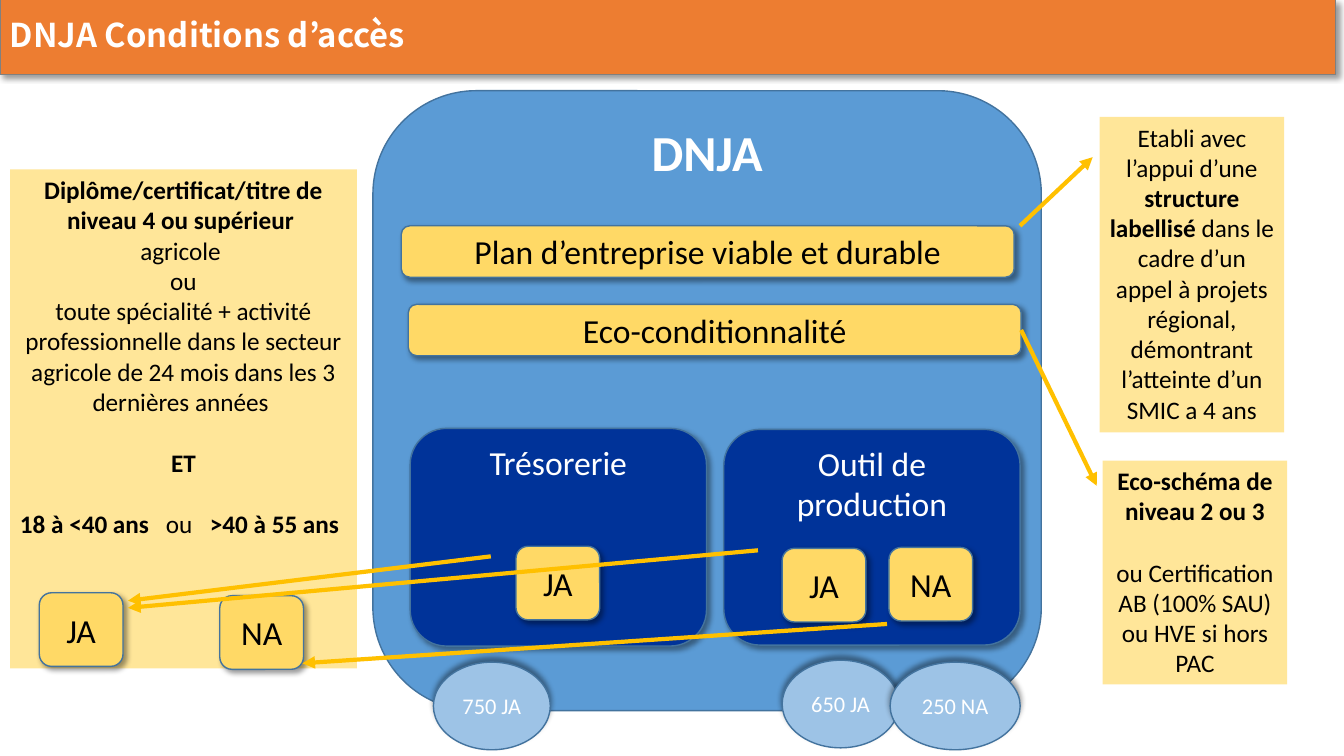
import pptx
import pptx.util
import pptx.dml.color
import pptx.enum.shapes
import pptx.enum.text
import pptx.oxml
import pptx.oxml.ns

Pt = pptx.util.Pt
RGB = pptx.dml.color.RGBColor
KIND = pptx.enum.shapes.MSO_SHAPE
ALIGN = pptx.enum.text.PP_ALIGN
ANCHOR = pptx.enum.text.MSO_ANCHOR
NS = pptx.oxml.ns.nsdecls("a")

ORANGE = RGB(0xED, 0x7D, 0x31)
GREY = RGB(0x80, 0x80, 0x80)
BLUE = RGB(0x5B, 0x9B, 0xD5)
EDGE = RGB(0x43, 0x73, 0x9E)
NAVY = RGB(0x00, 0x33, 0x99)
GOLD = RGB(0xFF, 0xD9, 0x66)
CREAM = RGB(0xFF, 0xE6, 0x99)
SKY = RGB(0x9D, 0xC3, 0xE6)
AMBER = RGB(0xFF, 0xC0, 0x00)
WHITE = RGB(0xFF, 0xFF, 0xFF)
BLACK = RGB(0x00, 0x00, 0x00)

deck = pptx.Presentation()
deck.slide_width, deck.slide_height = Pt(960), Pt(540)
slide = deck.slides.add_slide(deck.slide_layouts[6])


def draw(kind, box, fill, edge=EDGE, angle=None):
    """Add a filled shape; angle is the shadow direction in degrees."""
    shape = slide.shapes.add_shape(kind, *[Pt(n) for n in box])
    shape.fill.solid()
    shape.fill.fore_color.rgb = fill
    if edge is None:
        shape.line.fill.background()
    else:
        shape.line.color.rgb = edge
        shape.line.width = Pt(1)
    shape.shadow.inherit = False
    if angle is not None:
        shade = pptx.oxml.parse_xml(
            f'<a:outerShdw {NS} blurRad="{Pt(4)}" dist="{Pt(3)}" dir="{angle * 60000}" '
            'algn="ctr" rotWithShape="0"><a:srgbClr val="000000">'
            '<a:alpha val="40000"/></a:srgbClr></a:outerShdw>')
        shape.element.spPr.find(pptx.oxml.ns.qn("a:effectLst")).append(shade)
    return shape


def write(shape, paras, size, color, anchor=ANCHOR.MIDDLE, font="Calibri"):
    """Fill a shape with paragraphs, each a list of (text, bold) runs."""
    frame = shape.text_frame
    frame.word_wrap = True
    frame.vertical_anchor = anchor
    for i, runs in enumerate(paras):
        para = frame.add_paragraph() if i else frame.paragraphs[0]
        para.alignment = ALIGN.CENTER
        for text, bold in runs:
            run = para.add_run()
            run.text = text
            run.font.name = font
            run.font.size = Pt(size)
            run.font.bold = bold
            run.font.color.rgb = color
    return frame


# Title band
band = draw(KIND.RECTANGLE, (0, 0, 954, 53.3), ORANGE, GREY, 45)
band.line.width = Pt(0.75)
frame = write(band, [[("DNJA Conditions d’accès", True)]], 23.4, WHITE,
              font="Noto Sans CJK JP")
frame.paragraphs[0].alignment = ALIGN.LEFT
frame.paragraphs[0].line_spacing = 0.9

# Central panel and its two blocks
for box, fill, angle, text, size, bold, top in [
    ((266.4, 64.8, 477.4, 442.8), BLUE, None, "DNJA", 36, True, 0),
    ((517, 306.7, 211.7, 154.1), NAVY, 45, "Outil de production", 24, False, 2),
    ((293, 306, 211.7, 155.5), NAVY, 45, "Trésorerie", 24, False, 2),
]:
    panel = draw(KIND.ROUNDED_RECTANGLE, box, fill, EDGE, angle)
    frame = write(panel, [[(text, bold)]], size, WHITE, ANCHOR.TOP)
    frame.margin_top = Pt(top)

# Requirement bars
bars = []
for x, y, text in [
    (286.6, 161.3, "Plan d’entreprise viable et durable"),
    (291.6, 217.4, "Eco-conditionnalité"),
]:
    bar = draw(KIND.ROUNDED_RECTANGLE, (x, y, 437.8, 36.7), GOLD, EDGE, 45)
    write(bar, [[(text, False)]], 24, BLACK)
    bars.append(bar)

# Side notes
notes = []
for box, paras in [
    ((785.5, 83.5, 131.8, 225.4), [
        [("Etabli avec l’appui d’une ", False), ("structure labellisé ", True),
         ("dans le cadre d’un appel à projets régional, démontrant "
          "l’atteinte d’un SMIC a 4 ans", False)]]),
    ((7.2, 121, 247.7, 356.4), [
        [("Diplôme/certificat/titre de niveau 4 ou supérieur ", True)],
        [("agricole ", False)],
        [("ou", False)],
        [("toute spécialité + activité professionnelle dans le secteur "
          "agricole de 24 mois dans les 3 dernières années ", False)],
        [("ET", True)],
        [("18 à <40 ans\t", True), ("ou\t", False), (">40 à 55 ans", True)]]),
    ((787.7, 329, 131.8, 159.8), [
        [("Eco-schéma de niveau 2 ou 3", True)],
        [("ou Certification AB (100% SAU) ou HVE si hors PAC", False)]]),
]:
    note = draw(KIND.RECTANGLE, box, CREAM, None)
    notes.append(write(note, paras, 18, BLACK, ANCHOR.TOP).paragraphs)

both, ages = notes[1][4:]
both.space_before = both.space_after = notes[2][1].space_before = Pt(22)
ages.alignment = ALIGN.LEFT
ages._p.get_or_add_pPr().append(pptx.oxml.parse_xml(
    f'<a:tabLst {NS}><a:tab pos="{Pt(104.3)}" algn="l"/>'
    f'<a:tab pos="{Pt(135.7)}" algn="l"/></a:tabLst>'))

# JA and NA tiles
for x, y, text in [
    (368.6, 390.2, "JA"), (558.7, 391.7, "JA"), (635, 391, "NA"),
    (28.1, 423.4, "JA"), (157, 425.5, "NA"),
]:
    tile = draw(KIND.ROUNDED_RECTANGLE, (x, y, 59.8, 52.6), GOLD, EDGE, 45)
    write(tile, [[(text, False)]], 24, BLACK)

# Amounts
for x, y, wide, text in [
    (309.6, 473, 83.5, "750 JA"), (558.7, 471.6, 83.5, "650 JA"),
    (635.8, 473, 92.9, "250 NA"),
]:
    oval = draw(KIND.OVAL, (x, y, wide, 62.6), SKY, EDGE, 270)
    write(oval, [[(text, False)]], 16, WHITE)

# Arrows
for ends, start in [
    ((633.6, 445.7, 216, 473.8), None),
    ((350.6, 397.4, 91.4, 429.1), None),
    ((728.6, 161.3, 780.5, 112.3), None),
    ((541.4, 393.1, 91.4, 434.2), None),
    ((729.4, 235.8, 783.4, 347), bars[1]),
]:
    arrow = slide.shapes.add_connector(
        pptx.enum.shapes.MSO_CONNECTOR.STRAIGHT, *[Pt(n) for n in ends])
    if start is not None:
        arrow.begin_connect(start, 3)
    arrow.line.color.rgb = AMBER
    arrow.line.width = Pt(3)
    arrow.line._get_or_add_ln().append(
        pptx.oxml.parse_xml(f'<a:tailEnd {NS} type="triangle"/>'))
    arrow._element.spPr.append(pptx.oxml.parse_xml(f"<a:effectLst {NS}/>"))

deck.save("out.pptx")
